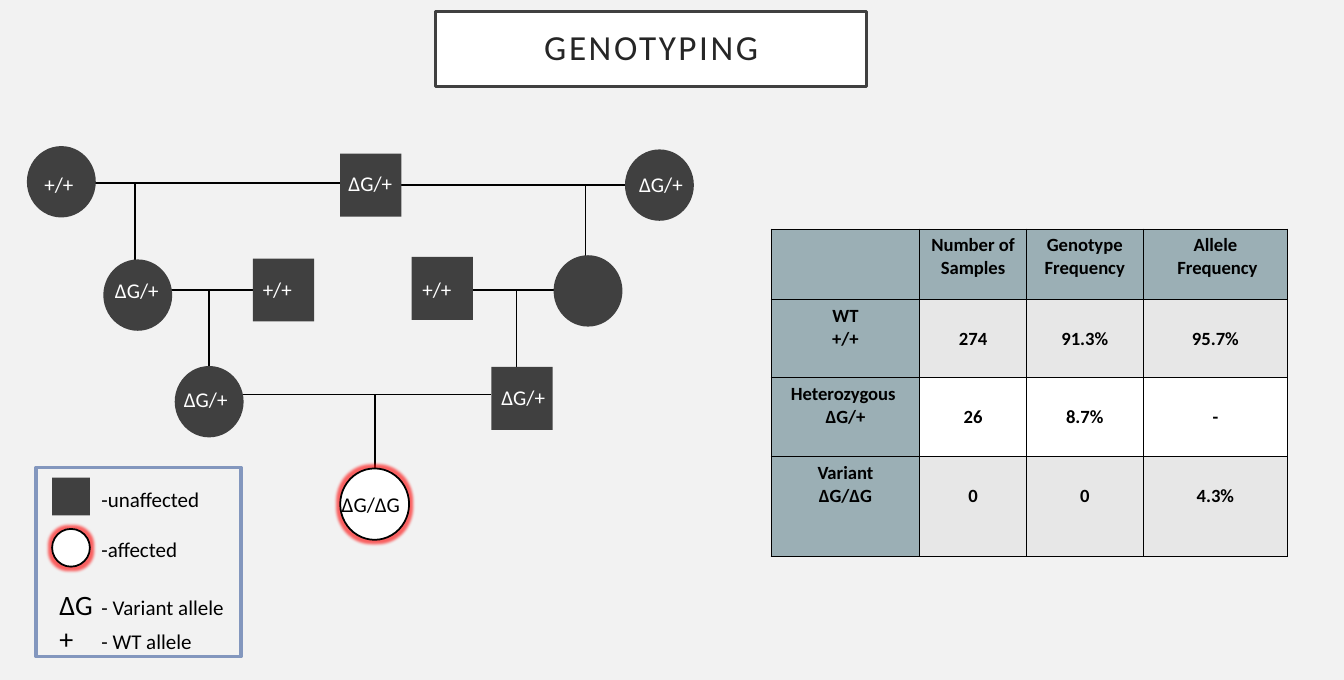
from lxml.etree import SubElement
from pptx import Presentation
from pptx.dml.color import RGBColor
from pptx.enum.shapes import MSO_CONNECTOR as Connector, MSO_SHAPE as Shape
from pptx.enum.text import MSO_ANCHOR as Anchor, PP_ALIGN as Align
from pptx.oxml.ns import qn
from pptx.util import Inches, Pt

COLORS = {
    "background": "F2F2F2", "dark": "404040", "title": "262626",
    "black": "000000", "white": "FFFFFF", "frame": "8397BE",
    "header": "9BAFB5", "band": "E7E7E7", "glow": "FF0000",
}
NODE_SIZES = {Shape.OVAL: (0.82, 0.85), Shape.RECTANGLE: (0.73, 0.75)}

# Pedigree lines: x1, y1, x2, y2
LINES = [
    (1.03, 2.18, 4.05, 2.18), (4.58, 2.2, 7.44, 2.2),
    (1.61, 2.18, 1.61, 3.21), (6.97, 2.2, 6.97, 3.05),
    (1.81, 3.45, 3.09, 3.45), (5.46, 3.45, 6.73, 3.45),
    (2.49, 3.45, 2.49, 4.36), (6.15, 3.45, 6.15, 4.37),
    (2.68, 4.7, 5.85, 4.7), (4.46, 4.7, 4.46, 5.57),
]
# Unaffected members: shape, left, top, label, label left, label top
MEMBERS = [
    (Shape.OVAL, 0.32, 1.74, "+/+", 0.43, 2.0),
    (Shape.RECTANGLE, 4.05, 1.83, "ΔG/+", 4.05, 1.98),
    (Shape.OVAL, 7.44, 1.78, "ΔG/+", 7.51, 1.99),
    (Shape.OVAL, 1.23, 3.09, "ΔG/+", 1.27, 3.26),
    (Shape.RECTANGLE, 3.01, 3.08, "+/+", 3.03, 3.25),
    (Shape.RECTANGLE, 4.9, 3.06, "+/+", 4.93, 3.24),
    (Shape.OVAL, 6.59, 3.04, "", 0, 0),
    (Shape.OVAL, 2.08, 4.36, "ΔG/+", 2.09, 4.56),
    (Shape.RECTANGLE, 5.85, 4.37, "ΔG/+", 5.87, 4.53),
]
# Legend rows: symbol, meaning, space before in points
LEGEND = [("", "-unaffected", 0), ("", "-affected", 22),
          ("ΔG", "- Variant allele", 22), ("+", "- WT allele", 0)]

COLUMN_WIDTHS = [1.77, 1.27, 1.39, 1.72]
ROW_HEIGHTS = [0.84, 0.93, 0.94, 1.19]
TABLE = [
    ["", "Number of Samples", "Genotype Frequency", "Allele\n Frequency"],
    ["WT\n+/+", "274", "91.3%", "95.7%"],
    ["Heterozygous \nΔG/+", "26", "8.7%", "-"],
    ["Variant\nΔG/ΔG", "0", "0", "4.3%"],
]


def rgb(name):
    return RGBColor.from_string(COLORS[name])


def set_values(target, values):
    for name, value in values.items():
        setattr(target, name, value)


def add_run(paragraph, text, size, color, bold=False):
    run = paragraph.add_run()
    run.text = text
    set_values(run.font, {"name": "Calibri", "size": Pt(size), "bold": bold})
    run.font.color.rgb = rgb(color)
    return run


def add_box(slide, kind, left, top, width, height, fill=None, line=None, weight=1.5):
    shape = slide.shapes.add_shape(
        kind, Inches(left), Inches(top), Inches(width), Inches(height))
    shape.shadow.inherit = False
    if fill:
        shape.fill.solid()
        shape.fill.fore_color.rgb = rgb(fill)
    else:
        shape.fill.background()
    if line:
        shape.line.color.rgb = rgb(line)
        shape.line.width = Pt(weight)
    else:
        shape.line.fill.background()
    return shape


def add_affected(slide, left, top, width, height):
    circle = add_box(slide, Shape.OVAL, left, top, width, height, "white", "black")
    effects = circle._element.spPr.find(qn("a:effectLst"))
    glow = SubElement(effects, qn("a:glow"), rad="63500")
    color = SubElement(glow, qn("a:srgbClr"), val=COLORS["glow"])
    SubElement(color, qn("a:alpha"), val="60000")


def add_line(slide, x1, y1, x2, y2):
    line = slide.shapes.add_connector(
        Connector.STRAIGHT, Inches(x1), Inches(y1), Inches(x2), Inches(y2))
    line.line.color.rgb = rgb("black")
    line.line.width = Pt(1.5)
    SubElement(line._element.spPr, qn("a:effectLst"))


def add_text_frame(slide, left, top, width, height):
    box = slide.shapes.add_textbox(
        Inches(left), Inches(top), Inches(width), Inches(height))
    box.text_frame.word_wrap = True
    return box.text_frame


def add_label(slide, text, left, top, color, width=0.85):
    frame = add_text_frame(slide, left, top, width, 0.4)
    add_run(frame.paragraphs[0], text, 18, color)


def add_title(slide):
    title = add_box(slide, Shape.RECTANGLE, 5.19, 0.14, 5.13, 0.89,
                    "white", "dark", 2.5)
    title.text_frame.vertical_anchor = Anchor.MIDDLE
    paragraph = title.text_frame.paragraphs[0]
    set_values(paragraph, {"alignment": Align.CENTER, "line_spacing": 0.9})
    run = add_run(paragraph, "GENOTYPING", 30.2, "title")
    run._r.get_or_add_rPr().set("spc", "220")


def add_pedigree(slide):
    for line in LINES:
        add_line(slide, *line)
    for kind, left, top, label, label_left, label_top in MEMBERS:
        add_box(slide, kind, left, top, *NODE_SIZES[kind], fill="dark")
        if label:
            add_label(slide, label, label_left, label_top, "white")
    add_affected(slide, 4.05, 5.58, *NODE_SIZES[Shape.OVAL])
    add_label(slide, "ΔG/ΔG", 3.97, 5.81, "black", 1.07)


def add_legend(slide):
    add_box(slide, Shape.RECTANGLE, 0.43, 5.57, 2.44, 2.25, line="frame", weight=3)
    add_box(slide, Shape.RECTANGLE, 0.62, 5.69, 0.45, 0.45, "dark")
    add_affected(slide, 0.62, 6.3, 0.45, 0.45)
    frame = add_text_frame(slide, 0.61, 5.74, 2.86, 2.42)
    for index, (symbol, meaning, space) in enumerate(LEGEND):
        paragraph = frame.add_paragraph() if index else frame.paragraphs[0]
        paragraph.space_before = Pt(space)
        # Hanging indent: the meanings line up behind the symbols
        indent = Inches(0.5)
        properties = paragraph._p.get_or_add_pPr()
        properties.set("marL", str(indent))
        properties.set("indent", str(-indent if symbol else 0))
        if symbol:
            add_run(paragraph, symbol + "\t", 24, "black")
        add_run(paragraph, meaning, 18, "black")


def add_borders(cell):
    properties = cell._tc.get_or_add_tcPr()
    for side in ("lnL", "lnR", "lnT", "lnB"):
        border = SubElement(properties, qn(f"a:{side}"), w=str(Pt(1)))
        fill = SubElement(border, qn("a:solidFill"))
        SubElement(fill, qn("a:srgbClr"), val=COLORS["black"])


def fill_cell(cell, text, color, top_margin):
    add_borders(cell)
    cell.fill.solid()
    cell.fill.fore_color.rgb = rgb(color)
    set_values(cell, {
        "margin_left": Inches(0.12), "margin_right": Inches(0.12),
        "margin_top": Inches(top_margin), "margin_bottom": Inches(0.06)})
    for index, line in enumerate(text.split("\n") if text else []):
        frame = cell.text_frame
        paragraph = frame.add_paragraph() if index else frame.paragraphs[0]
        paragraph.alignment = Align.CENTER
        add_run(paragraph, line, 16, "black", bold=True)


def add_frequency_table(slide):
    table = slide.shapes.add_table(
        len(ROW_HEIGHTS), len(COLUMN_WIDTHS), Inches(9.18), Inches(2.73),
        Inches(sum(COLUMN_WIDTHS)), Inches(sum(ROW_HEIGHTS))).table
    set_values(table, {"first_row": False, "horz_banding": False})
    for column, width in zip(table.columns, COLUMN_WIDTHS):
        column.width = Inches(width)
    for row, (height, texts) in enumerate(zip(ROW_HEIGHTS, TABLE)):
        table.rows[row].height = Inches(height)
        for column, text in enumerate(texts):
            # Values sit level with the second line of the row heading
            if row == 0 or column == 0:
                color, margin = "header", 0.06
            else:
                color, margin = ("band" if row % 2 else "white"), 0.33
            fill_cell(table.cell(row, column), text, color, margin)


def main():
    presentation = Presentation()
    set_values(presentation, {"slide_width": Inches(16), "slide_height": Inches(8.1)})
    slide = presentation.slides.add_slide(presentation.slide_layouts[6])
    slide.background.fill.solid()
    slide.background.fill.fore_color.rgb = rgb("background")
    add_pedigree(slide)
    add_legend(slide)
    add_title(slide)
    add_frequency_table(slide)
    presentation.save("out.pptx")


if __name__ == "__main__":
    main()
